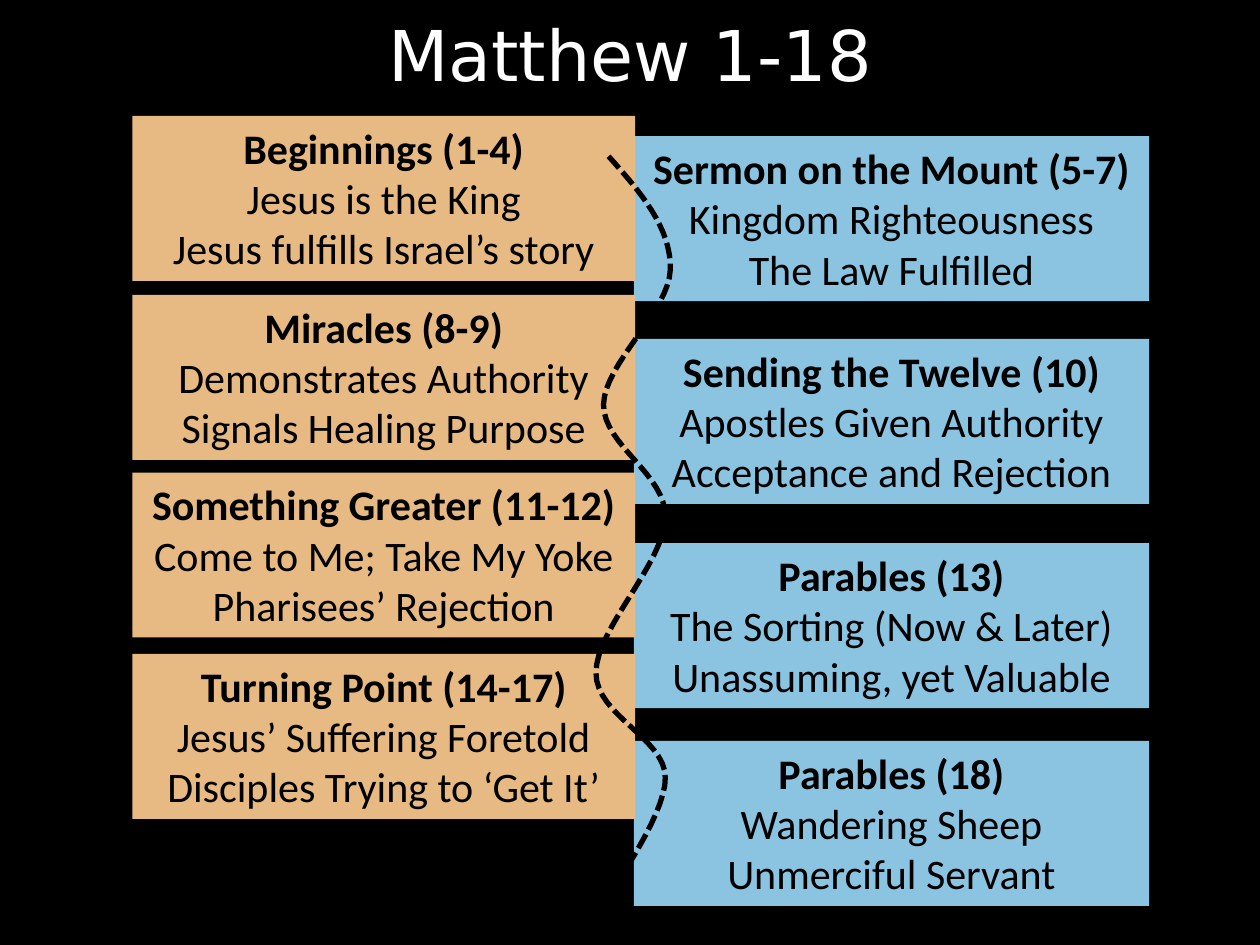
from dataclasses import dataclass

from pptx import Presentation
from pptx import util as u
from pptx.dml.color import RGBColor
from pptx.enum import dml, shapes, text


@dataclass(frozen=True)
class Theme:
    black: str = "000000"
    white: str = "FFFFFF"
    sand: str = "E6BA82"
    sky: str = "8BC4E0"
    head: str = "DejaVu Sans"
    body: str = "Calibri"
    big: int = 40
    mid: int = 24


def write(par, words, font, size, color, bold=False, space=None):
    par.alignment = text.PP_ALIGN.CENTER
    par.line_spacing = space
    run = par.add_run()
    run.text = words
    run.font.name = font
    run.font.size = u.Pt(size)
    run.font.bold = bold
    run.font.color.rgb = RGBColor.from_string(color)


def bezier(start, ctrl, steps=16):
    points = []
    for a, b, end in ctrl:
        for i in range(1, steps + 1):
            t = i / steps
            s = 1 - t
            points.append(tuple(
                s**3 * p + 3 * s * s * t * q + 3 * s * t * t * r + t**3 * e
                for p, q, r, e in zip(start, a, b, end)))
        start = end
    return points


class Deck:
    def __init__(self, theme):
        self.theme = theme
        self.prs = Presentation()
        self.prs.slide_width = u.Inches(10)
        self.prs.slide_height = u.Inches(7.5)
        self.slide = self.prs.slides.add_slide(self.prs.slide_layouts[6])
        fill = self.slide.background.fill
        fill.solid()
        fill.fore_color.rgb = RGBColor.from_string(theme.black)

    def title(self, words, *box):
        frame = self.slide.shapes.add_textbox(*map(u.Inches, box)).text_frame
        frame.word_wrap = True
        frame.vertical_anchor = text.MSO_ANCHOR.MIDDLE
        write(frame.paragraphs[0], words, self.theme.head, self.theme.big,
              self.theme.white, space=0.9)

    def card(self, lines, color, *box):
        shape = self.slide.shapes.add_shape(
            shapes.MSO_SHAPE.RECTANGLE, *map(u.Inches, box))
        shape.shadow.inherit = False
        shape.fill.solid()
        shape.fill.fore_color.rgb = RGBColor.from_string(color)
        shape.line.fill.background()
        frame = shape.text_frame
        frame.word_wrap = True
        frame.vertical_anchor = text.MSO_ANCHOR.TOP
        for i, words in enumerate(lines):
            par = frame.add_paragraph() if i else frame.paragraphs[0]
            write(par, words, self.theme.body, self.theme.mid,
                  self.theme.black, bold=i == 0)

    def curve(self, start, ctrl):
        pen = self.slide.shapes.build_freeform(*map(u.Inches, start))
        pen.add_line_segments(
            [(u.Inches(x), u.Inches(y)) for x, y in bezier(start, ctrl)],
            close=False)
        shape = pen.convert_to_shape()
        shape.shadow.inherit = False
        shape.fill.background()
        shape.line.color.rgb = RGBColor.from_string(self.theme.black)
        shape.line.width = u.Pt(3)
        shape.line.dash_style = dml.MSO_LINE.SQUARE_DOT


STORY = [
    (0.92, "Beginnings (1-4)", "Jesus is the King",
     "Jesus fulfills Israel’s story"),
    (2.34, "Miracles (8-9)", "Demonstrates Authority",
     "Signals Healing Purpose"),
    (3.75, "Something Greater (11-12)", "Come to Me; Take My Yoke",
     "Pharisees’ Rejection"),
    (5.19, "Turning Point (14-17)", "Jesus’ Suffering Foretold",
     "Disciples Trying to ‘Get It’"),
]
SPEECH = [
    (1.08, "Sermon on the Mount (5-7)", "Kingdom Righteousness",
     "The Law Fulfilled"),
    (2.69, "Sending the Twelve (10)", "Apostles Given Authority",
     "Acceptance and Rejection"),
    (4.31, "Parables (13)", "The Sorting (Now & Later)",
     "Unassuming, yet Valuable"),
    (5.88, "Parables (18)", "Wandering Sheep", "Unmerciful Servant"),
]
TRAIL = [
    ((5.08, 1.52), (5.33, 1.81), (5.32, 2.14)),
    ((5.31, 2.47), (4.8, 2.88), (4.79, 3.21)),
    ((4.79, 3.54), (5.29, 3.76), (5.28, 4.11)),
    ((5.27, 4.47), (4.73, 4.99), (4.73, 5.34)),
    ((4.73, 5.68), (5.28, 5.86), (5.28, 6.17)),
    ((5.29, 6.48), (4.77, 7.19), (4.77, 7.19)),
]


def main():
    theme = Theme()
    deck = Deck(theme)
    deck.title("Matthew 1-18", 0.69, 0.08, 8.62, 0.77)
    for cards, color, left, width in (
            (SPEECH, theme.sky, 5.03, 4.09), (STORY, theme.sand, 1.05, 3.99)):
        for top, *lines in cards:
            deck.card(lines, color, left, top, width, 1.31)
    deck.curve((4.83, 1.24), TRAIL)
    deck.prs.save("out.pptx")


if __name__ == "__main__":
    main()
